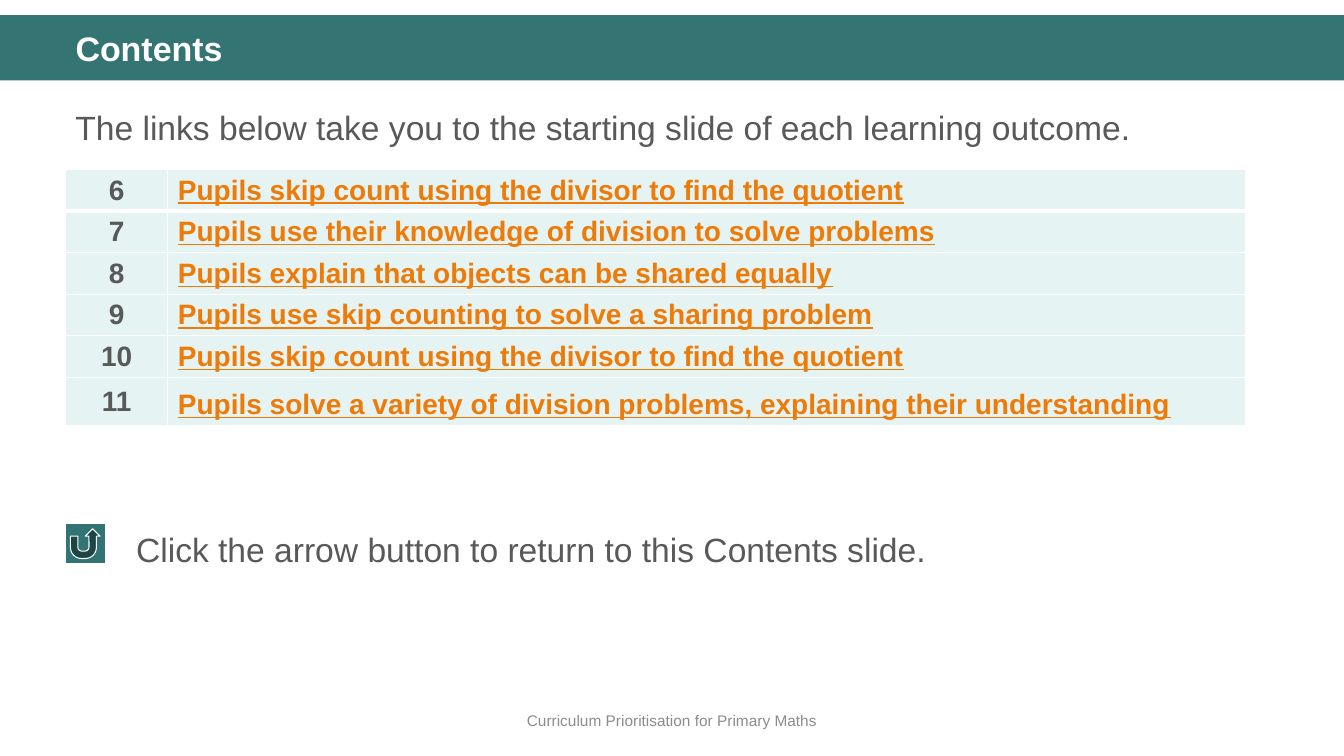
import pptx
import pptx.util
import pptx.dml.color
import pptx.enum.shapes
import pptx.enum.text
import pptx.oxml
import pptx.oxml.ns

Cm = pptx.util.Cm
Pt = pptx.util.Pt
SHAPE = pptx.enum.shapes.MSO_SHAPE
ALIGN = pptx.enum.text.PP_ALIGN
ANCHOR = pptx.enum.text.MSO_ANCHOR

TITLE = "Contents"
INTRO = "The links below take you to the starting slide of each learning outcome."
OUTCOMES = [
    ("6", "Pupils skip count using the divisor to find the quotient"),
    ("7", "Pupils use their knowledge of division to solve problems"),
    ("8", "Pupils explain that objects can be shared equally"),
    ("9", "Pupils use skip counting to solve a sharing problem"),
    ("10", "Pupils skip count using the divisor to find the quotient"),
    ("11", "Pupils solve a variety of division problems, explaining their understanding"),
]
RETURN_HINT = "Click the arrow button to return to this Contents slide."
FOOTER = "Curriculum Prioritisation for Primary Maths"

FONT = "Arial"
WHITE, GREY, ORANGE = "FFFFFF", "595959", "EE7B08"
BAND, BUTTON, CELL, FOOTER_GREY = "347574", "327473", "E5F3F2", "8C8C8C"

WIDTH, HEIGHT = 33.87, 19.05
LEFT, TEXT_WIDTH = 1.65, 30.94
BUTTON_TOP, BUTTON_SIZE = 13.2, 1
COLUMNS = (2.58, 27.16)
ROW_HEIGHT, LAST_ROW_HEIGHT = 1.04, 1.18


def colour(code):
    return pptx.dml.color.RGBColor.from_string(code)


def write(frame, text, size, code, bold=False, underline=False,
          align=ALIGN.LEFT, anchor=ANCHOR.TOP, spacing=None):
    frame.word_wrap = True
    frame.vertical_anchor = anchor
    para = frame.paragraphs[0]
    para.alignment = align
    para.line_spacing = spacing
    span = para.add_run()
    span.text = text
    font = span.font
    font.name, font.size, font.bold, font.underline = FONT, Pt(size), bold, underline
    font.color.rgb = colour(code)
    return para


def add_text(page, place, *content, **style):
    box = page.shapes.add_textbox(*map(Cm, place))
    return write(box.text_frame, *content, **style)


def add_solid(page, kind, place, code):
    shape = page.shapes.add_shape(kind, *map(Cm, place))
    shape.shadow.inherit = False
    shape.fill.solid()
    shape.fill.fore_color.rgb = colour(code)
    shape.line.fill.background()
    return shape


def set_borders(cell, bottom):
    properties = cell._tc.get_or_add_tcPr()
    for index, (side, points) in enumerate((("L", 1), ("R", 1), ("T", 1), ("B", bottom))):
        properties.insert(index, pptx.oxml.parse_xml(
            f'<a:ln{side} {pptx.oxml.ns.nsdecls("a")} w="{Pt(points)}">'
            f'<a:solidFill><a:srgbClr val="{WHITE}"/></a:solidFill></a:ln{side}>'))


def add_outcomes(page):
    heights = [ROW_HEIGHT] * (len(OUTCOMES) - 1) + [LAST_ROW_HEIGHT]
    frame = page.shapes.add_table(len(OUTCOMES), len(COLUMNS), Cm(LEFT), Cm(4.27),
                                  Cm(sum(COLUMNS)), Cm(sum(heights)))
    table = frame.table
    for column, width in zip(table.columns, COLUMNS):
        column.width = Cm(width)
    for number, (row, height, outcome) in enumerate(zip(table.rows, heights, OUTCOMES)):
        row.height = Cm(height)
        last = number == len(OUTCOMES) - 1
        for index, (cell, text) in enumerate(zip(row.cells, outcome)):
            link = index == 1
            cell.fill.solid()
            cell.fill.fore_color.rgb = colour(CELL)
            set_borders(cell, 3 if number == 0 else 1)
            cell.margin_top = cell.margin_bottom = Cm(0.1)
            cell.vertical_anchor = ANCHOR.MIDDLE
            write(cell.text_frame, text, 20, ORANGE if link else GREY,
                  bold=True, underline=link, anchor=None,
                  align=ALIGN.LEFT if link else ALIGN.CENTER,
                  spacing=1.2 if link and last else None)


def main():
    deck = pptx.Presentation()
    deck.slide_width, deck.slide_height = Cm(WIDTH), Cm(HEIGHT)
    page = deck.slides.add_slide(deck.slide_layouts[5])

    band = add_solid(page, SHAPE.RECTANGLE, (0, 0.38, WIDTH, 1.65), BAND)
    title = page.shapes.title
    band.element.addnext(title.element)
    title.left, title.top, title.width, title.height = map(Cm, (LEFT, 0.69, TEXT_WIDTH, 1.19))
    write(title.text_frame, TITLE, 24.3, WHITE, bold=True, anchor=ANCHOR.MIDDLE, spacing=0.9)

    add_text(page, (0, 17.65, WIDTH, 1.02), FOOTER, 11, FOOTER_GREY,
             align=ALIGN.CENTER, anchor=ANCHOR.MIDDLE)
    intro = add_text(page, (LEFT, 2.36, TEXT_WIDTH, 8.92), INTRO, 24, GREY, spacing=1.2)
    intro.space_before = Pt(10)
    add_outcomes(page)

    button = add_solid(page, SHAPE.ACTION_BUTTON_RETURN,
                       (LEFT, BUTTON_TOP, BUTTON_SIZE, BUTTON_SIZE), BUTTON)
    button.line.color.rgb = colour(WHITE)
    button.line.width = Pt(0.75)
    add_text(page, (3.18, BUTTON_TOP, 28.75, 1.27), RETURN_HINT, 24, GREY)
    deck.save("out.pptx")


if __name__ == "__main__":
    main()
